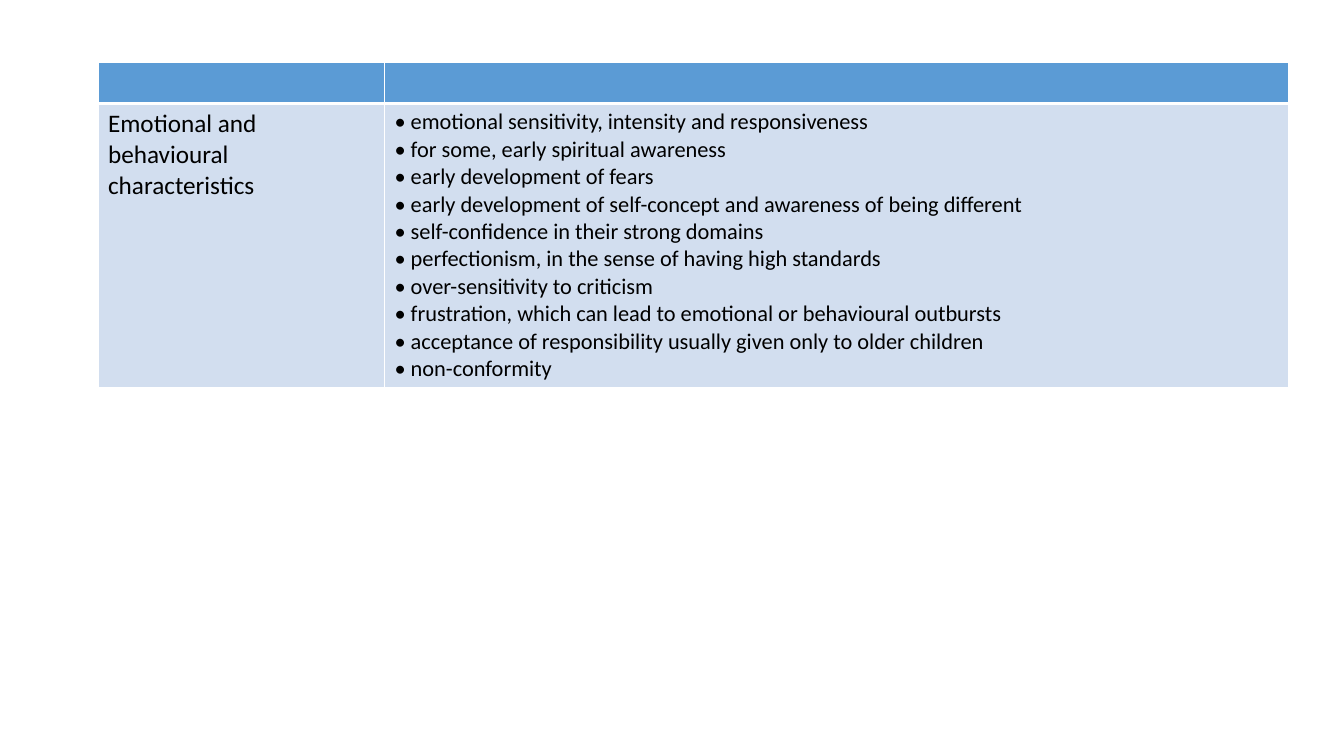
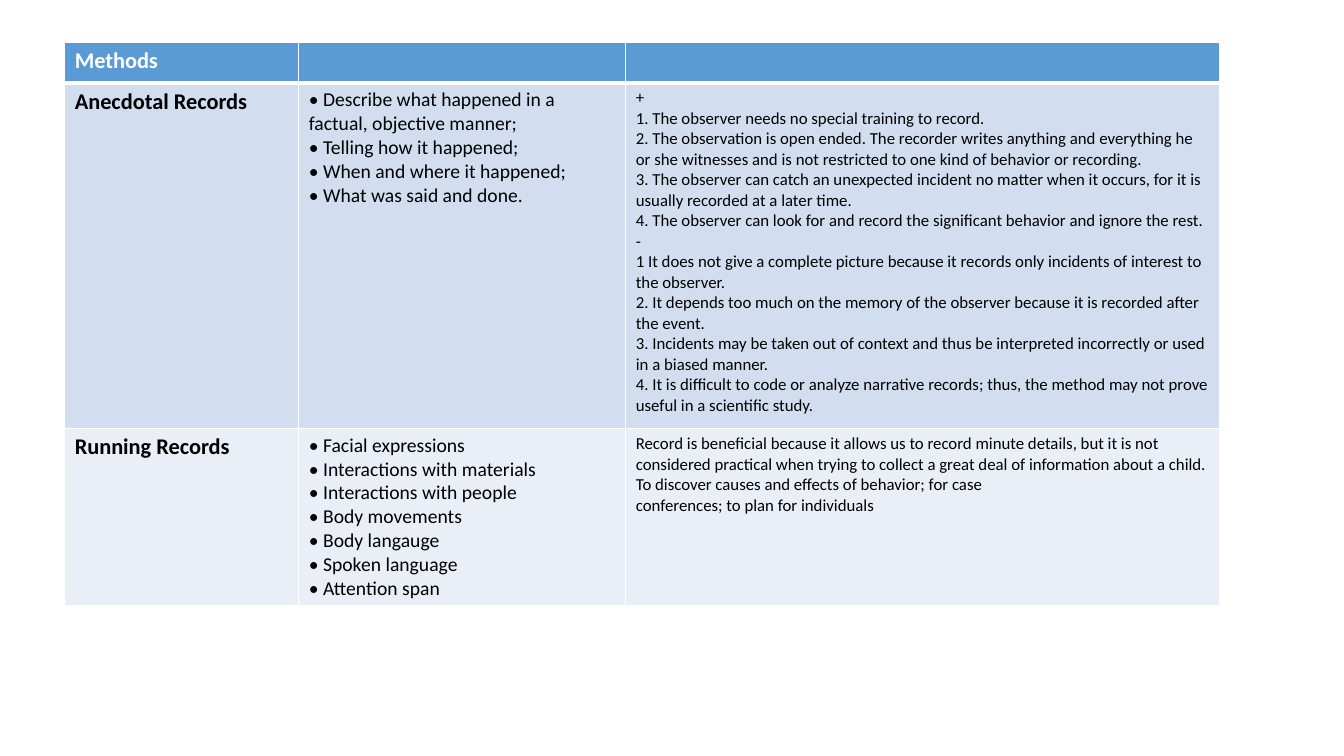
from lxml.etree import SubElement
from pptx import Presentation
from pptx.dml.color import RGBColor as RGB
from pptx.oxml.ns import qn
from pptx.util import Cm, Pt

COLORS = {
    "header": "5B9BD5",
    "band_dark": "D2DEEF",
    "band_light": "EAEFF7",
    "border": "FFFFFF",
    "header_text": "FFFFFF",
    "text": "000000",
}
FONT = "Calibri"
BLANK_LAYOUT = 6
THIN, THICK = 1, 3

# Each cell is a list of its paragraphs.
CHARACTERISTICS = [
    [[], []],
    [
        ["Emotional and behavioural characteristics"],
        [
            "• emotional sensitivity, intensity and responsiveness",
            "• for some, early spiritual awareness",
            "• early development of fears",
            "• early development of self-concept and awareness of being different",
            "• self-confidence in their strong domains",
            "• perfectionism, in the sense of having high standards",
            "• over-sensitivity to criticism",
            "• frustration, which can lead to emotional or behavioural outbursts",
            "• acceptance of responsibility usually given only to older children",
            "• non-conformity",
        ],
    ],
]

METHODS = [
    [["Methods"], [], []],
    [
        ["Anecdotal Records"],
        [
            "• Describe what happened in a factual, objective manner;",
            "• Telling how it happened;",
            "• When and where it happened;",
            "• What was said and done.",
        ],
        [
            "+",
            "1. The observer needs no special training to record.",
            "2. The observation is open ended. The recorder writes anything and everything "
            "he or she witnesses and is not restricted to one kind of behavior or recording.",
            "3. The observer can catch an unexpected incident no matter when it occurs, "
            "for it is usually recorded at a later time.",
            "4. The observer can look for and record the significant behavior "
            "and ignore the rest.",
            "-",
            "1 It does not give a complete picture because it records only incidents of "
            "interest to the observer.",
            "2. It depends too much on the memory of the observer because it is recorded "
            "after the event.",
            "3. Incidents may be taken out of context and thus be interpreted incorrectly "
            "or used in a biased manner.",
            "4. It is difficult to code or analyze narrative records; thus, the method may "
            "not prove useful in a scientific study.",
        ],
    ],
    [
        ["Running Records"],
        [
            "• Facial expressions",
            "• Interactions with materials",
            "• Interactions with people",
            "• Body movements",
            "• Body langauge",
            "• Spoken language",
            "• Attention span",
        ],
        [
            "Record is beneficial because it allows us to record minute details, but it is "
            "not considered practical when trying to collect a great deal of information "
            "about a child.",
            "To discover causes and effects of behavior; for case",
            "conferences; to plan for individuals",
        ],
    ],
]


def set_borders(cell, top, bottom):
    """Draw the four cell edges; the side edges are always thin."""
    tc_pr = cell._tc.get_or_add_tcPr()
    for edge, width in (("L", THIN), ("R", THIN), ("T", top), ("B", bottom)):
        ln = SubElement(tc_pr, qn(f"a:ln{edge}"), w=str(Pt(width)))
        fill = SubElement(ln, qn("a:solidFill"))
        SubElement(fill, qn("a:srgbClr"), val=COLORS["border"])


def write_cell(cell, lines, size, color, bold):
    cell.text_frame.text = "\n".join(lines)
    for p in cell.text_frame.paragraphs:
        for r in p.runs:
            r.font.name = FONT
            r.font.size = Pt(size)
            r.font.bold = bold
            r.font.color.rgb = RGB.from_string(COLORS[color])


def row_style(row):
    """Return fill, text colour, top and bottom border widths of a row."""
    if row == 0:
        return "header", "header_text", THIN, THICK
    band = "band_dark" if row % 2 else "band_light"
    return band, "text", THICK if row == 1 else THIN, THIN


def add_banded_table(slide, left, top, widths, heights, rows, sizes, bold_first=False):
    """Add a table with a header row; sizes gives the text size of each column."""
    frame = slide.shapes.add_table(len(rows), len(widths), Cm(left), Cm(top),
                                   Cm(sum(widths)), Cm(sum(heights)))
    table = frame.table
    for column, width in zip(table.columns, widths):
        column.width = Cm(width)
    for i, (height, cells) in enumerate(zip(heights, rows)):
        table.rows[i].height = Cm(height)
        fill, color, top_width, bottom_width = row_style(i)
        for j, (lines, size) in enumerate(zip(cells, sizes)):
            cell = table.cell(i, j)
            set_borders(cell, top_width, bottom_width)
            cell.fill.solid()
            cell.fill.fore_color.rgb = RGB.from_string(COLORS[fill])
            if lines:
                write_cell(cell, lines, size, color, i == 0 or (bold_first and j == 0))


def main():
    prs = Presentation()
    prs.slide_width, prs.slide_height = Cm(33.87), Cm(19.05)
    layout = prs.slide_layouts[BLANK_LAYOUT]

    add_banded_table(prs.slides.add_slide(layout), 2.47, 1.58, [7.22, 22.78],
                     [1.03, 7.11], CHARACTERISTICS, [18, 16])
    add_banded_table(prs.slides.add_slide(layout), 1.63, 1.06, [5.9, 8.24, 14.96],
                     [1.03, 8.71, 4.45], METHODS, [16, 14, 12], bold_first=True)

    prs.save("out.pptx")


if __name__ == "__main__":
    main()
